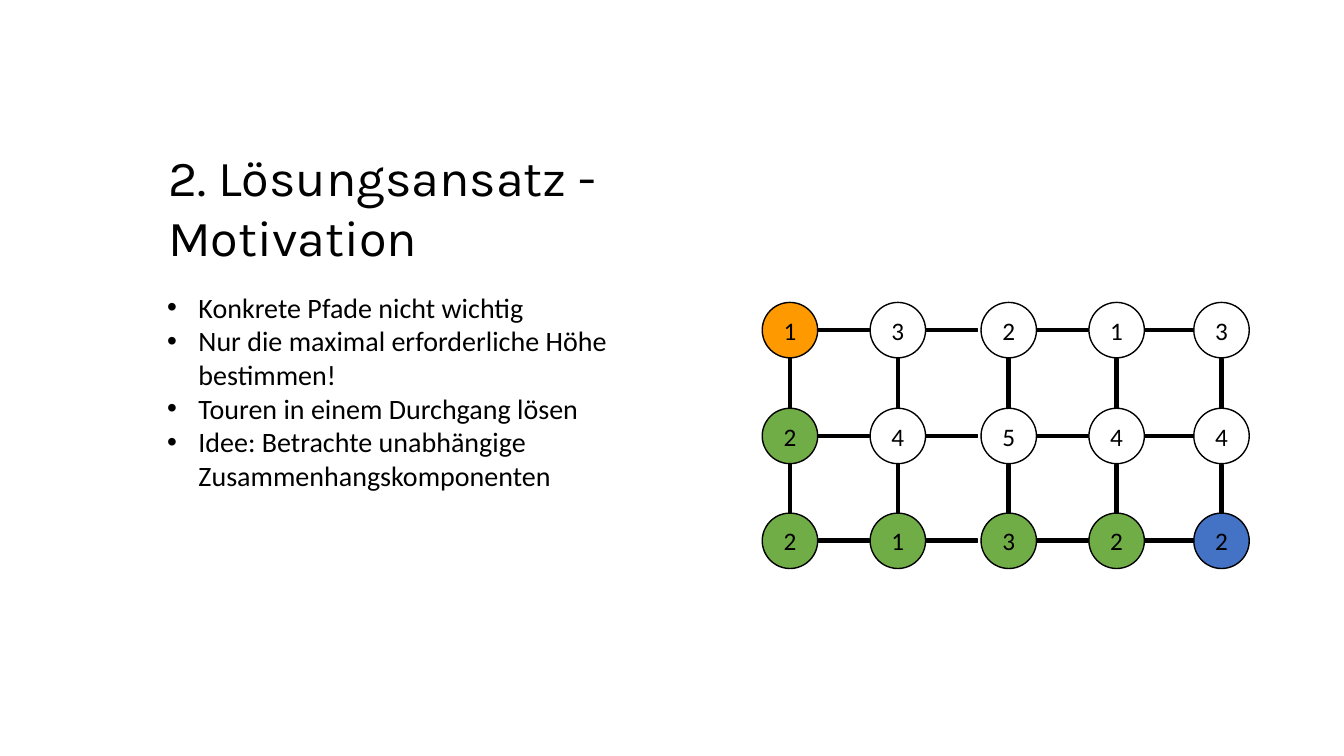
from dataclasses import dataclass

from lxml import etree
from pptx import Presentation
from pptx.dml.color import RGBColor
from pptx.enum.shapes import MSO_SHAPE
from pptx.enum.text import MSO_ANCHOR, PP_ALIGN
from pptx.oxml.ns import qn
from pptx.shapes.autoshape import Shape
from pptx.slide import Slide
from pptx.text.text import TextFrame, _Paragraph
from pptx.util import Inches, Pt

OVAL, MINUS = MSO_SHAPE.OVAL, MSO_SHAPE.MATH_MINUS
MIDDLE, CENTER = MSO_ANCHOR.MIDDLE, PP_ALIGN.CENTER

COLORS = {
    "black": "000000",
    "open": "FFFFFF",
    "start": "FF9900",
    "path": "70AD47",
    "goal": "4472C4",
}

# Graph grid in inches: left edge of each column, top edge of each row
COLUMNS = (7.56, 8.63, 9.73, 10.8, 11.84)
ROWS = (3.0, 4.05, 5.09)
NODE_SIZE = 0.55
EDGE_LENGTH, EDGE_HEIGHT = 0.69, 0.14
EDGE_REACH = 0.81  # from a node's near edge to the middle of its outgoing edge

HEIGHTS = ("13213", "24544", "21322")
ROLES = {
    (0, 0): "start",
    (0, 1): "path",
    (0, 2): "path",
    (1, 2): "path",
    (2, 2): "path",
    (3, 2): "path",
    (4, 2): "goal",
}

TITLE = "2. Lösungsansatz - Motivation"
POINTS = (
    "Konkrete Pfade nicht wichtig",
    "Nur die maximal erforderliche Höhe bestimmen!",
    "Touren in einem Durchgang lösen",
    "Idee: Betrachte unabhängige Zusammenhangskomponenten",
)


@dataclass(frozen=True)
class Node:
    column: int
    row: int
    height: str

    @property
    def left(self) -> float:
        return COLUMNS[self.column]

    @property
    def top(self) -> float:
        return ROWS[self.row]

    @property
    def role(self) -> str:
        return ROLES.get((self.column, self.row), "open")


def color(name: str) -> RGBColor:
    return RGBColor.from_string(COLORS[name])


def add_span(para: _Paragraph, text: str, size: float, font: str) -> None:
    span = para.add_run()
    span.text = text
    span.font.size = Pt(size)
    span.font.name = font
    span.font.color.rgb = color("black")


def add_text_box(page: Slide, left: float, top: float,
                 width: float, height: float) -> TextFrame:
    box = page.shapes.add_textbox(Inches(left), Inches(top), Inches(width), Inches(height))
    box.text_frame.word_wrap = True
    return box.text_frame


def add_bullet(para: _Paragraph) -> None:
    properties = para._p.get_or_add_pPr()
    properties.set("marL", str(Inches(0.31)))
    properties.set("indent", str(-Inches(0.31)))
    bullet_color = etree.SubElement(properties, qn("a:buClr"))
    etree.SubElement(bullet_color, qn("a:srgbClr"), val=COLORS["black"])
    etree.SubElement(properties, qn("a:buFont"), typeface="Arial")
    etree.SubElement(properties, qn("a:buChar"), char="•")


def add_outlined(page: Slide, kind: MSO_SHAPE, left: float, top: float,
                 width: float, height: float, fill: str) -> Shape:
    shape = page.shapes.add_shape(
        kind, Inches(left), Inches(top), Inches(width), Inches(height))
    shape.shadow.inherit = False
    shape.fill.solid()
    shape.fill.fore_color.rgb = color(fill)
    shape.line.color.rgb = color("black")
    shape.line.width = Pt(1)
    return shape


def add_node(page: Slide, node: Node) -> None:
    circle = add_outlined(page, OVAL, node.left, node.top, NODE_SIZE, NODE_SIZE, node.role)
    circle.text_frame.vertical_anchor = MIDDLE
    para = circle.text_frame.paragraphs[0]
    para.alignment = CENTER
    add_span(para, node.height, 18, "Calibri")


def add_edge(page: Slide, center_x: float, center_y: float, rotation: float) -> None:
    edge = add_outlined(page, MINUS, center_x - EDGE_LENGTH / 2, center_y - EDGE_HEIGHT / 2,
                        EDGE_LENGTH, EDGE_HEIGHT, "black")
    edge.adjustments[0] = 0.235
    edge.rotation = rotation


def add_graph(page: Slide) -> None:
    for row, heights in enumerate(HEIGHTS):
        for column, height in enumerate(heights):
            node = Node(column, row, height)
            middle = NODE_SIZE / 2
            add_node(page, node)
            if column < len(COLUMNS) - 1:
                add_edge(page, node.left + EDGE_REACH, node.top + middle, 0)
            if row < len(ROWS) - 1:
                add_edge(page, node.left + middle, node.top + EDGE_REACH, 90)


def main() -> None:
    deck = Presentation()
    deck.slide_width, deck.slide_height = Inches(13.33), Inches(7.5)
    page = deck.slides.add_slide(deck.slide_layouts[6])

    # Bullet points
    points = add_text_box(page, 1.56, 2.83, 5.41, 3.74)
    for index, point in enumerate(POINTS):
        para = points.add_paragraph() if index else points.paragraphs[0]
        add_bullet(para)
        add_span(para, point, 20, "Calibri")

    # Title
    title = add_text_box(page, 1.57, 1.4, 6.96, 0.71)
    add_span(title.paragraphs[0], TITLE, 36, "Karla")

    # Grid graph with the marked path
    add_graph(page)

    deck.save("out.pptx")


if __name__ == "__main__":
    main()
